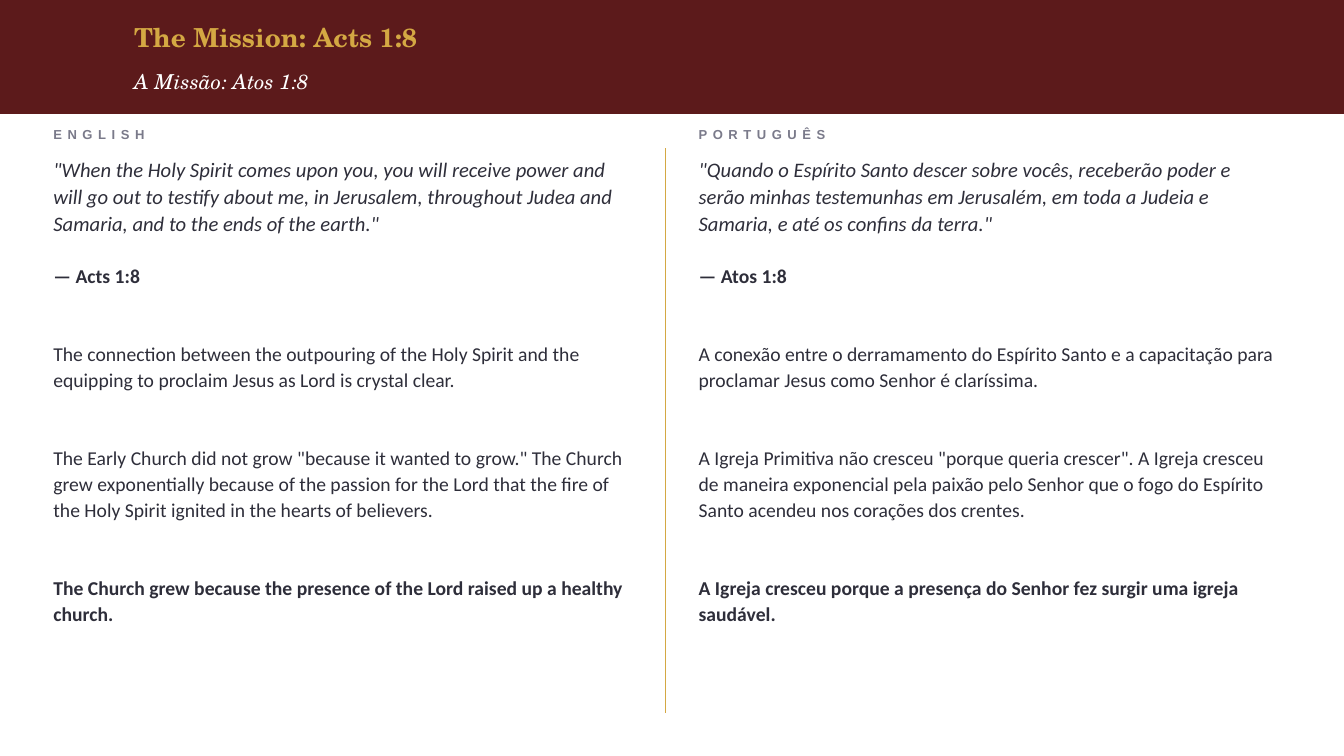
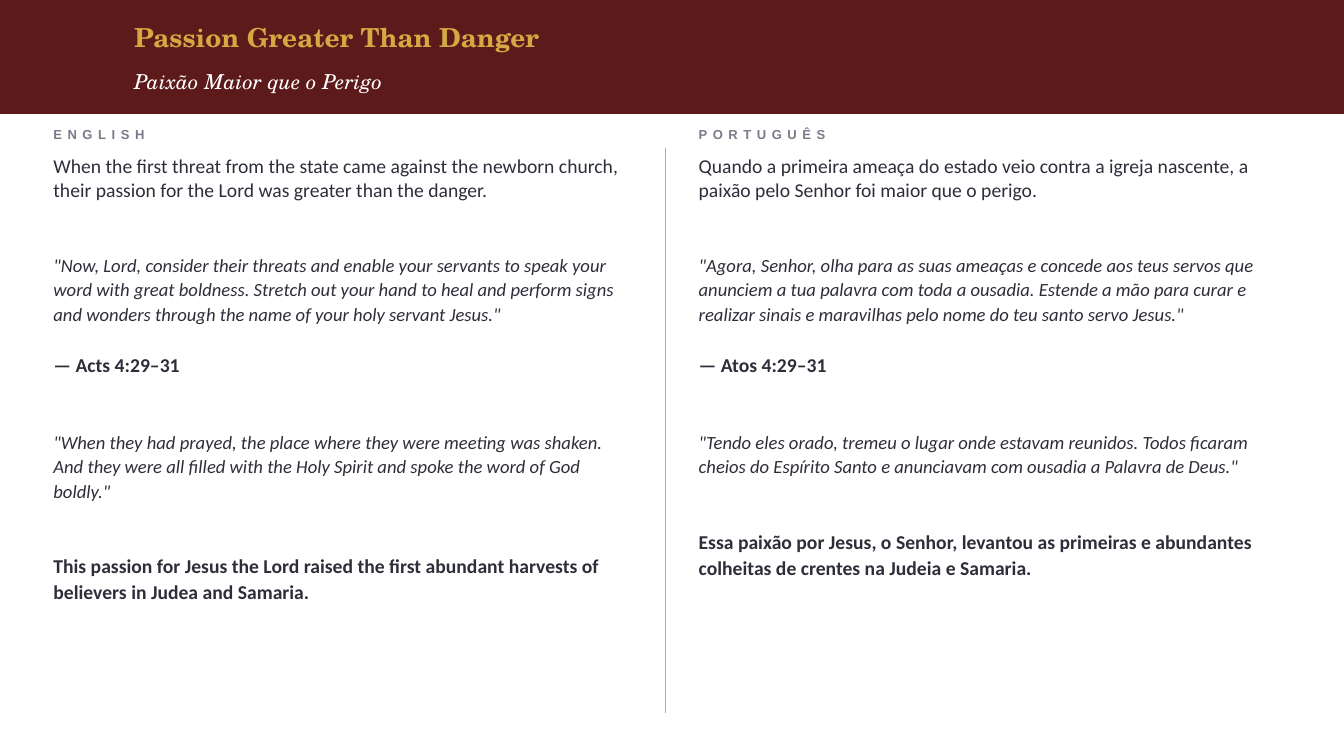
from dataclasses import dataclass

from lxml.etree import SubElement
from pptx import Presentation
from pptx.dml.color import RGBColor as Rgb
from pptx.enum.shapes import MSO_CONNECTOR as Link, MSO_SHAPE as Shape
from pptx.enum.text import MSO_ANCHOR as Anchor
from pptx.oxml.ns import qn
from pptx.util import Inches, Pt


@dataclass(frozen=True)
class Theme:
    wine: str = "5C1A1B"
    gold: str = "D4A843"
    white: str = "FFFFFF"
    gray: str = "7A7A8A"
    ink: str = "2E2E3A"
    serif: str = "TeX Gyre Schola"
    sans: str = "Arial"
    body: str = "Calibri"
    title: float = 18.7
    sub: float = 14.7
    label: float = 9.3
    large: float = 14.7
    text: float = 14
    small: float = 13.3
    lead: float = 1.1


T = Theme()
WIDE, HIGH = 13.33, 7.5

STYLES = {
    "open": dict(size=T.text, lead=1.0, after=35.7),
    "verse": dict(size=T.large, italic=True, after=18.5),
    "quote": dict(size=T.small, italic=True, after=18),
    "prayer": dict(size=T.small, italic=True, after=35.7),
    "ref": dict(size=T.text, bold=True, after=37.4),
    "text": dict(size=T.text, after=37.4),
    "key": dict(size=T.text, bold=True),
}


def write(para, text, size, font=T.body, color=T.ink, bold=False,
          italic=False, track=0, lead=None, after=0):
    run = para.add_run()
    run.text = text
    face = run.font
    face.size, face.name = Pt(size), font
    face.bold, face.italic = bold, italic
    face.color.rgb = Rgb.from_string(color)
    if track:
        face._element.set("spc", str(track * 100))
    if lead:
        para.line_spacing = lead
    para.space_after = Pt(after)


def frame(slide, box, anchor=Anchor.MIDDLE):
    area = slide.shapes.add_textbox(*map(Inches, box)).text_frame
    area.word_wrap = True
    area.vertical_anchor = anchor
    area.margin_left = area.margin_right = 0
    area.margin_top = area.margin_bottom = 0
    return area


def header(slide, box, title, sub):
    left, top, width, height = box
    band = slide.shapes.add_shape(Shape.RECTANGLE, *map(Inches, box))
    band.shadow.inherit = False
    band.fill.solid()
    band.fill.fore_color.rgb = Rgb.from_string(T.wine)
    band.line.fill.background()
    inset = left + 1.33
    span = width - 2
    write(frame(slide, (inset, top + 0.11, span, 0.51)).paragraphs[0], title,
          T.title, font=T.serif, color=T.gold, bold=True)
    write(frame(slide, (inset, top + 0.61, span, 0.4)).paragraphs[0], sub,
          T.sub, font=T.serif, color=T.white, italic=True)


def rule(slide, x, top, end):
    line = slide.shapes.add_connector(
        Link.STRAIGHT, *map(Inches, (x, top, x, end)))
    line.line.color.rgb = Rgb.from_string(T.gold)
    line.line.width = Pt(1)
    SubElement(line._element.spPr, qn("a:effectLst"))


def column(slide, box, label, kinds, texts):
    left, top, width, height = box
    write(frame(slide, (left, top, 2, 0.27)).paragraphs[0], label, T.label,
          font=T.sans, color=T.gray, bold=True, track=4)
    area = frame(slide, (left, top + 0.33, width, height - 0.33), Anchor.TOP)
    for spot, (kind, text) in enumerate(zip(kinds, texts)):
        para = area.add_paragraph() if spot else area.paragraphs[0]
        write(para, text, **{"lead": T.lead, **STYLES[kind]})


def build(deck, title, sub, kinds, english, native):
    slide = deck.slides.add_slide(deck.slide_layouts[6])
    header(slide, (0, 0, WIDE, 1.13), title, sub)
    rule(slide, 6.6, 1.47, 7.07)
    sides = ((0.53, "ENGLISH", english), (6.93, "PORTUGUÊS", native))
    for left, label, texts in sides:
        column(slide, (left, 1.2, 5.73, 5.86), label, kinds, texts)


PAGES = [
    dict(
        title="The Mission: Acts 1:8",
        sub="A Missão: Atos 1:8",
        kinds=("verse", "ref", "text", "text", "key"),
        english=(
            '"When the Holy Spirit comes upon you, you will receive power and '
            "will go out to testify about me, in Jerusalem, throughout Judea "
            'and Samaria, and to the ends of the earth."',
            "— Acts 1:8",
            "The connection between the outpouring of the Holy Spirit and the "
            "equipping to proclaim Jesus as Lord is crystal clear.",
            'The Early Church did not grow "because it wanted to grow." The '
            "Church grew exponentially because of the passion for the Lord "
            "that the fire of the Holy Spirit ignited in the hearts of "
            "believers.",
            "The Church grew because the presence of the Lord raised up a "
            "healthy church.",
        ),
        native=(
            '"Quando o Espírito Santo descer sobre vocês, receberão poder e '
            "serão minhas testemunhas em Jerusalém, em toda a Judeia e "
            'Samaria, e até os confins da terra."',
            "— Atos 1:8",
            "A conexão entre o derramamento do Espírito Santo e a capacitação "
            "para proclamar Jesus como Senhor é claríssima.",
            'A Igreja Primitiva não cresceu "porque queria crescer". A Igreja '
            "cresceu de maneira exponencial pela paixão pelo Senhor que o "
            "fogo do Espírito Santo acendeu nos corações dos crentes.",
            "A Igreja cresceu porque a presença do Senhor fez surgir uma "
            "igreja saudável.",
        ),
    ),
    dict(
        title="Passion Greater Than Danger",
        sub="Paixão Maior que o Perigo",
        kinds=("open", "quote", "ref", "prayer", "key"),
        english=(
            "When the first threat from the state came against the newborn "
            "church, their passion for the Lord was greater than the danger.",
            '"Now, Lord, consider their threats and enable your servants to '
            "speak your word with great boldness. Stretch out your hand to "
            "heal and perform signs and wonders through the name of your holy "
            'servant Jesus."',
            "— Acts 4:29–31",
            '"When they had prayed, the place where they were meeting was '
            "shaken. And they were all filled with the Holy Spirit and spoke "
            'the word of God boldly."',
            "This passion for Jesus the Lord raised the first abundant "
            "harvests of believers in Judea and Samaria.",
        ),
        native=(
            "Quando a primeira ameaça do estado veio contra a igreja "
            "nascente, a paixão pelo Senhor foi maior que o perigo.",
            '"Agora, Senhor, olha para as suas ameaças e concede aos teus '
            "servos que anunciem a tua palavra com toda a ousadia. Estende a "
            "mão para curar e realizar sinais e maravilhas pelo nome do teu "
            'santo servo Jesus."',
            "— Atos 4:29–31",
            '"Tendo eles orado, tremeu o lugar onde estavam reunidos. Todos '
            "ficaram cheios do Espírito Santo e anunciavam com ousadia a "
            'Palavra de Deus."',
            "Essa paixão por Jesus, o Senhor, levantou as primeiras e "
            "abundantes colheitas de crentes na Judeia e Samaria.",
        ),
    ),
]


def main():
    deck = Presentation()
    deck.slide_width, deck.slide_height = Inches(WIDE), Inches(HIGH)
    for page in PAGES:
        build(deck, **page)
    deck.save("out.pptx")


if __name__ == "__main__":
    main()
